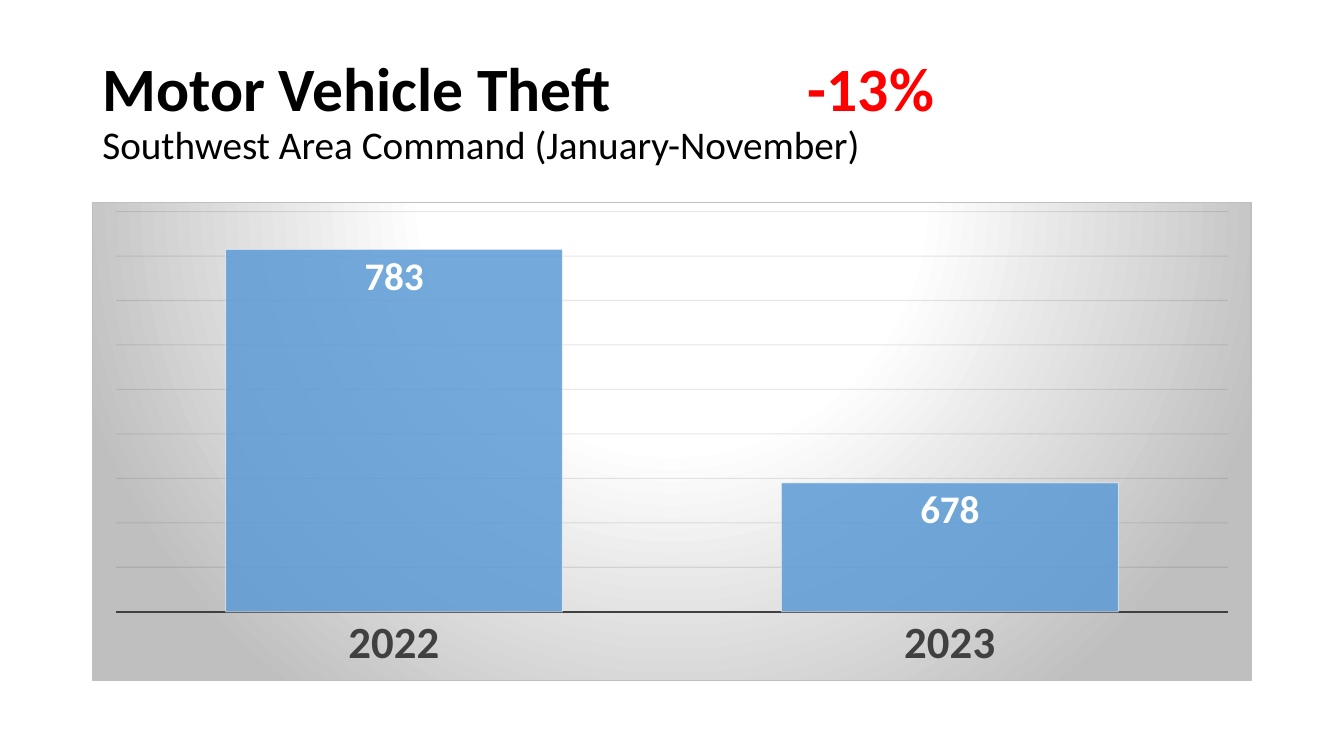
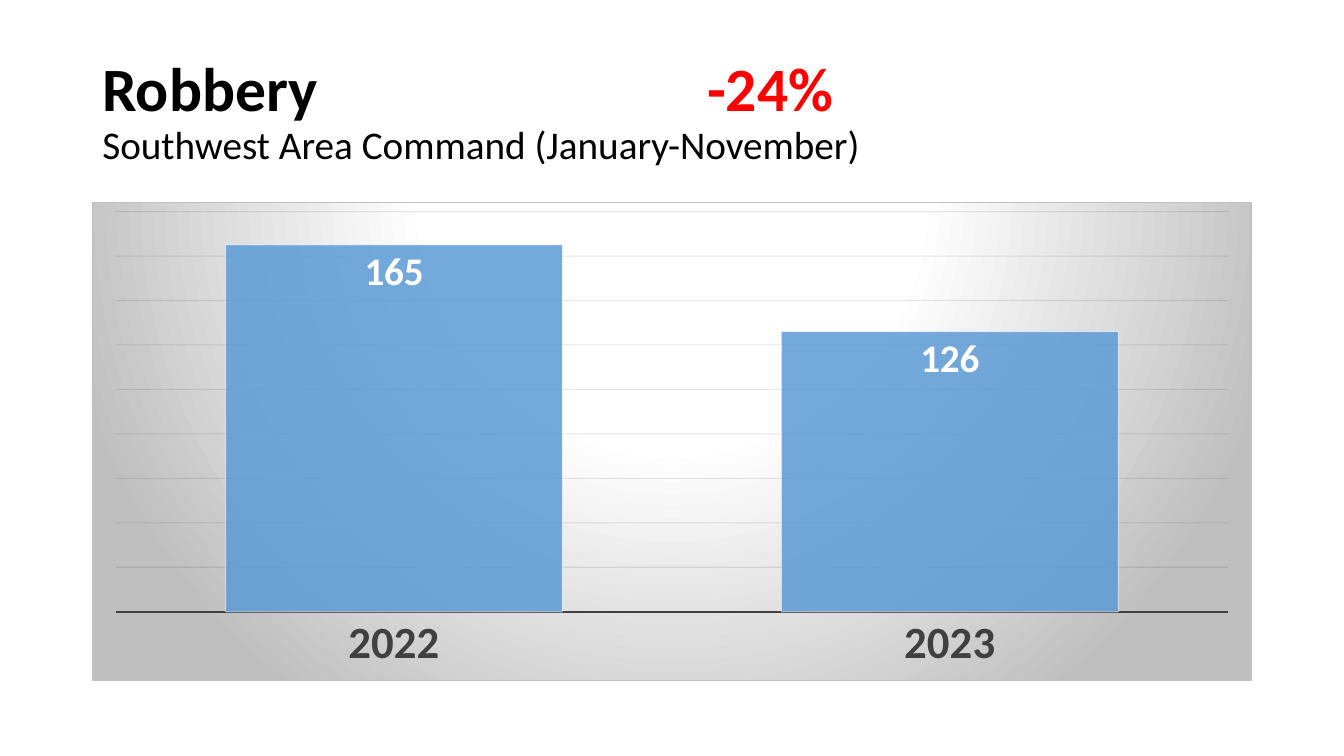
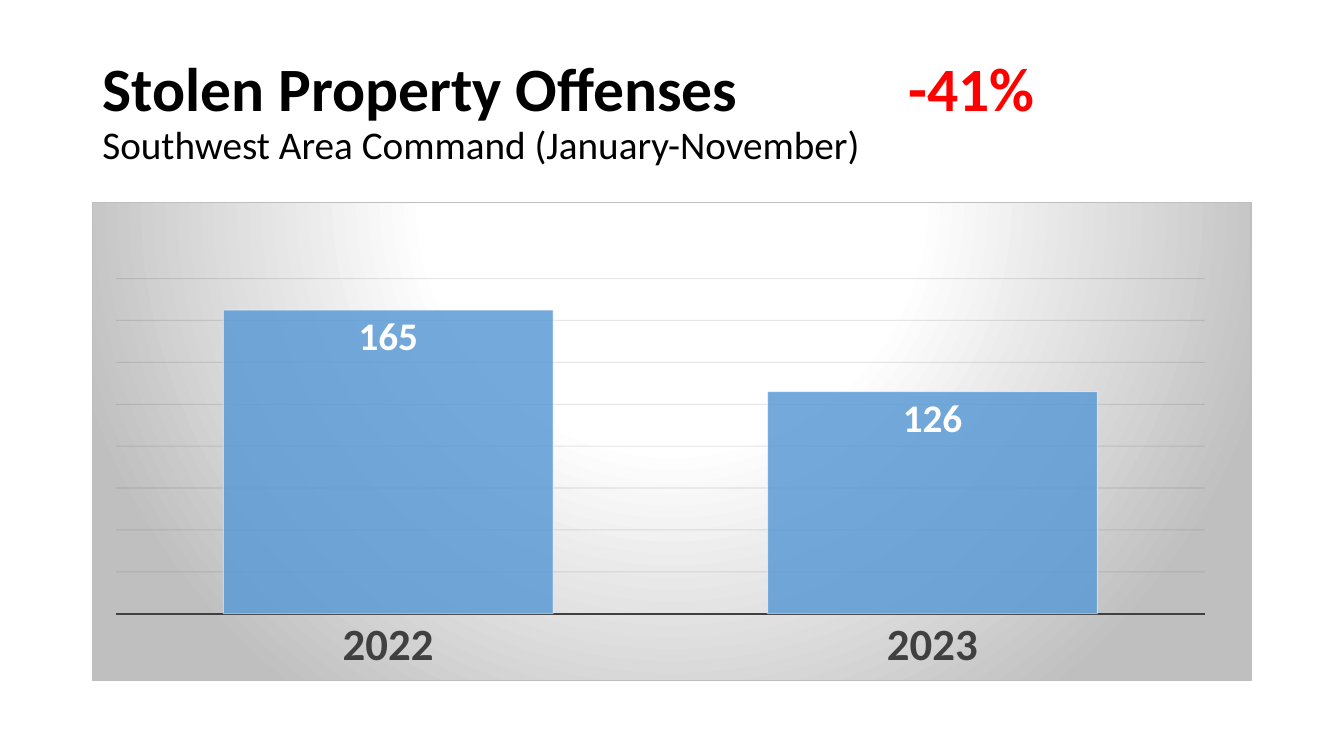
import dataclasses

import pptx
import pptx.chart.data
import pptx.dml.color
import pptx.enum.chart
import pptx.enum.text
import pptx.oxml
import pptx.oxml.ns
import pptx.util
from pptx.util import Cm, Pt

# Content
SUBTITLE = "Southwest Area Command (January-November)"
YEARS = ("2022", "2023")
# tab: where the change figure starts; scale: lowest and highest axis value;
# plot: inner plot area as fractions of the chart (None leaves it automatic)
OFFENSES = [
    {"title": "Motor Vehicle Theft", "change": "-13%", "tab": Cm(17.78),
     "counts": (783, 678), "scale": (620, 800), "plot": None},
    {"title": "Robbery", "change": "-24%", "tab": Cm(15.24),
     "counts": (165, 126), "scale": (0, 180), "plot": None},
    {"title": "Stolen Property Offenses", "change": "-41%", "tab": Cm(20.32),
     "counts": (165, 126), "scale": (20, 180),
     "plot": {"x": 0.02, "y": 0.16, "w": 0.94, "h": 0.7}},
]
GRID_STEP = 20


# Shared look
@dataclasses.dataclass(frozen=True)
class Theme:
    font: str = "Calibri"
    text: str = "000000"
    change: str = "FF0000"
    bar: str = "5B9BD5"
    light: str = "FFFFFF"
    axis: str = "404040"
    grid: str = "0D0D0D"
    edge: str = "BFBFBF"
    title_size: int = 44
    subtitle_size: int = 28
    year_size: int = 32
    label_size: int = 28
    base_size: int = 10
    thin: float = 0.75
    thick: float = 1.5


THEME = Theme()

# Layout
SLIDE_SIZE = Cm(33.87), Cm(19.05)
LEFT, WIDTH = Cm(2.33), Cm(29.21)
TITLE_TOP, TITLE_HEIGHT = Cm(1.01), Cm(3.68)
CHART_TOP, CHART_HEIGHT = Cm(5.08), Cm(12.09)


def rgb(color):
    return pptx.dml.color.RGBColor.from_string(color)


def set_font(font, size, color, bold=False):
    font.name = THEME.font
    font.size = Pt(size)
    font.bold = bold
    font.color.rgb = rgb(color)


def set_line(line, color, width):
    line.color.rgb = rgb(color)
    line.width = Pt(width)


def make_xml(markup):
    """Parse markup whose root tag is followed by a {ns} mark."""
    return pptx.oxml.parse_xml(markup.replace("{ns}", pptx.oxml.ns.nsdecls("a", "c")))


def set_opacity(chart, owner, percent):
    for color in chart.element.xpath(f"//{owner}/a:srgbClr"):
        color.append(make_xml(f'<a:alpha {{ns}} val="{percent * 1000}"/>'))


# Title: offense, tabbed change figure, then the area
def add_title(page, offense):
    box = page.shapes.add_textbox(LEFT, TITLE_TOP, WIDTH, TITLE_HEIGHT)
    frame = box.text_frame
    frame.word_wrap = True
    frame.vertical_anchor = pptx.enum.text.MSO_ANCHOR.MIDDLE

    heading = frame.paragraphs[0]
    heading.line_spacing = 0.9
    heading._p.get_or_add_pPr().append(make_xml(
        f'<a:tabLst {{ns}}><a:tab pos="{int(offense["tab"])}" algn="l"/></a:tabLst>'))
    set_font(heading.font, THEME.title_size, THEME.text, bold=True)
    heading.add_run().text = offense["title"] + "\t"
    change = heading.add_run()
    change.text = offense["change"]
    change.font.color.rgb = rgb(THEME.change)

    area = frame.add_paragraph()
    area.text = SUBTITLE
    area.line_spacing = 0.9
    set_font(area.font, THEME.subtitle_size, THEME.text)


# Chart background: light centre fading to grey at the sides
def add_background(chart):
    stops = "".join(
        f'<a:gs pos="{percent * 1000}"><a:srgbClr val="{color}"/></a:gs>'
        for percent, color in ((0, THEME.light), (39, THEME.light), (100, THEME.edge)))
    background = make_xml(
        f'<c:spPr {{ns}}><a:gradFill><a:gsLst>{stops}</a:gsLst><a:path path="circle">'
        '<a:fillToRect l="50000" t="-80000" r="50000" b="180000"/></a:path></a:gradFill>'
        f'<a:ln w="{int(Pt(THEME.thin))}"><a:solidFill><a:srgbClr val="{THEME.edge}"/>'
        '</a:solidFill></a:ln></c:spPr>')
    chart.element.xpath("./c:chart")[0].addnext(background)


def place_plot(chart, plot):
    area = chart.element.xpath("./c:chart/c:plotArea")[0]
    for layout in area.xpath("./c:layout"):
        area.remove(layout)
    modes = "".join(f'<c:{side}Mode val="edge"/>' for side in "xy")
    sizes = "".join(f'<c:{side} val="{value}"/>' for side, value in plot.items())
    area.insert(0, make_xml(
        '<c:layout {ns}><c:manualLayout><c:layoutTarget val="inner"/>'
        f'{modes}{sizes}</c:manualLayout></c:layout>'))


def add_counts_chart(page, offense):
    data = pptx.chart.data.CategoryChartData()
    data.categories = YEARS
    data.add_series("Series 1", offense["counts"])
    chart = page.shapes.add_chart(
        pptx.enum.chart.XL_CHART_TYPE.COLUMN_CLUSTERED,
        LEFT, CHART_TOP, WIDTH, CHART_HEIGHT, data).chart
    chart.has_title = False
    chart.has_legend = False
    set_font(chart.font, THEME.base_size, THEME.text)

    # Axes
    years = chart.category_axis
    years.major_tick_mark = pptx.enum.chart.XL_TICK_MARK.NONE
    set_font(years.tick_labels.font, THEME.year_size, THEME.axis, bold=True)
    set_line(years.format.line, THEME.axis, THEME.thick)
    values = chart.value_axis
    values.visible = False
    values.minimum_scale, values.maximum_scale = offense["scale"]
    values.major_unit = GRID_STEP
    values.has_major_gridlines = True
    set_line(values.major_gridlines.format.line, THEME.grid, THEME.thin)
    set_opacity(chart, "c:majorGridlines/c:spPr/a:ln/a:solidFill", 10)

    # Columns and their labels
    plot = chart.plots[0]
    plot.gap_width = 65
    plot.vary_by_categories = False
    columns = plot.series[0].format
    columns.fill.solid()
    columns.fill.fore_color.rgb = rgb(THEME.bar)
    set_line(columns.line, THEME.light, THEME.thin)
    set_opacity(chart, "c:ser/c:spPr/a:solidFill", 85)
    set_opacity(chart, "c:ser/c:spPr/a:ln/a:solidFill", 50)
    plot.has_data_labels = True
    labels = plot.data_labels
    labels.show_value = True
    labels.position = pptx.enum.chart.XL_LABEL_POSITION.INSIDE_END
    set_font(labels.font, THEME.label_size, THEME.light, bold=True)

    add_background(chart)
    if offense["plot"]:
        place_plot(chart, offense["plot"])


def main():
    deck = pptx.Presentation()
    deck.slide_width, deck.slide_height = SLIDE_SIZE
    for offense in OFFENSES:
        page = deck.slides.add_slide(deck.slide_layouts[6])
        add_title(page, offense)
        add_counts_chart(page, offense)
    deck.save("out.pptx")


if __name__ == "__main__":
    main()
